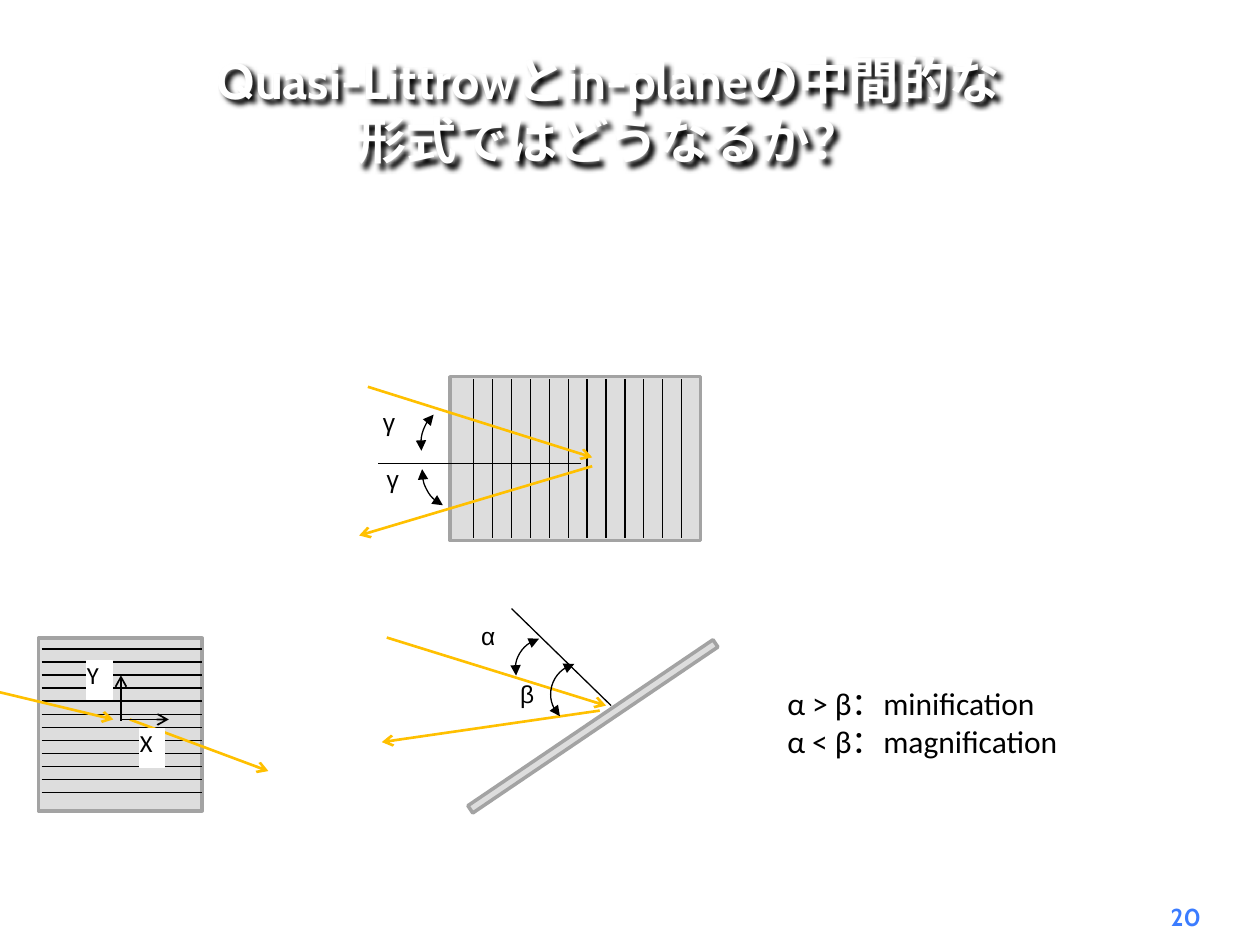
import pptx
import pptx.util
import pptx.dml.color
import pptx.enum.dml
import pptx.enum.shapes
import pptx.enum.text
import lxml.etree
from pptx.oxml.ns import qn

Inches = pptx.util.Inches
SHAPE = pptx.enum.shapes.MSO_SHAPE
ALIGN = pptx.enum.text.PP_ALIGN
ANCHOR = pptx.enum.text.MSO_ANCHOR

THEME = {
    "ink": "000000", "white": "FFFFFF", "ray": "FFC000", "plate": "DDDDDD",
    "edge": "A3A3A3", "page": "3B7CFF",
    "head_font": "Cabin", "body_font": "Calibri", "greek_font": "Arial",
    "title": 28.8, "note": 18, "label": 14,
    "thin": 0.75, "axis": 1, "ray_width": 1.5, "edge_width": 2, "box_width": 0.5,
}

TITLE = "Quasi-Littrowとin-planeの中間的な形式ではどうなるか？"
NOTES = ["α > β：minification", "α < β：magnification"]
PAGE = "20"

SIDE_VIEW = {
    "plate": (3.53, 5.73, 2.35, 0.07, 145.9),
    "rays": [(3.07, 5.06, 4.81, 5.6), (4.76, 5.64, 3.03, 5.89)],
    "normals": [(4.85, 5.6, 4.06, 4.83)],
    "arcs": [(4.09, 5.06, 0.52, 0.5, 101.01, 151.95), (4.37, 5.26, 0.52, 0.5, 82.13, 151.95)],
    "angles": [("α", 3.72, 4.88, 0.73, 0.5), ("β", 4.03, 5.34, 0.73, 0.5)],
}
TOP_VIEW = {
    "plate": (3.57, 2.99, 1.99, 1.3, 0),
    "grooves": [(3.76 + 0.15 * i, 3.01, 3.76 + 0.15 * i, 4.27) for i in range(12)],
    "rays": [(2.92, 3.07, 4.7, 3.63), (4.7, 3.7, 2.85, 4.25)],
    "normals": [(4.61, 3.68, 3, 3.68)],
    "arcs": [(3.34, 3.23, 0.52, 0.59, 101.01, 141.53), (3.35, 3.44, 0.52, 0.59, 65.44, 109.58)],
    "angles": [("γ", 2.94, 3.18, 0.29, 0.5), ("γ", 2.97, 3.63, 0.29, 0.5)],
}
GROOVE_STEP = (6.29 - 5.15) / 11
FRONT_VIEW = {
    "plate": (0.27, 5.1, 1.37, 1.3, 270),
    "grooves": [(0.33, 5.15 + GROOVE_STEP * i, 1.6, 5.15 + GROOVE_STEP * i) for i in range(12)],
    "rays": [(-0.27, 5.43, 0.9, 5.71), (1.03, 5.71, 2.13, 6.12)],
    "axes": [(0.96, 5.71, 1.34, 5.71), (0.96, 5.72, 0.96, 5.36)],
    "axis_names": [("Y", 0.69, 5.24, 0.2, 0.31), ("X", 1.11, 5.78, 0.2, 0.31)],
}


def rgb(name):
    return pptx.dml.color.RGBColor.from_string(THEME[name])


def write(sp, lines, font="body_font", size="label", color="ink", bold=False,
          align=ALIGN.JUSTIFY, anchor=ANCHOR.TOP, inset=None):
    tf = sp.text_frame
    tf.word_wrap = True
    tf.auto_size = pptx.enum.text.MSO_AUTO_SIZE.NONE
    tf.vertical_anchor = anchor
    if inset is not None:
        tf.margin_left = tf.margin_top = tf.margin_right = tf.margin_bottom = Inches(inset)
    for i, line in enumerate(lines):
        p = tf.paragraphs[0] if i == 0 else tf.add_paragraph()
        p.alignment = align
        r = p.add_run()
        r.text = line
        r.font.name = THEME[font]
        r.font.size = pptx.util.Pt(THEME[size])
        r.font.bold = bold
        r.font.color.rgb = rgb(color)


def add_text(shapes, lines, x, y, w, h, **style):
    sp = shapes.add_textbox(Inches(x), Inches(y), Inches(w), Inches(h))
    write(sp, lines, **style)


def stroke(sp, color, width, head=None, tail=None):
    sp.line.color.rgb = rgb(color)
    sp.line.width = pptx.util.Pt(THEME[width])
    ln = sp.line._get_or_add_ln()
    for tag, kind in (("a:headEnd", head), ("a:tailEnd", tail)):
        if kind:
            lxml.etree.SubElement(ln, qn(tag), type=kind)


def add_line(shapes, x1, y1, x2, y2, color="ink", width="thin", tail=None):
    cn = shapes.add_connector(pptx.enum.shapes.MSO_CONNECTOR.STRAIGHT,
                              Inches(x1), Inches(y1), Inches(x2), Inches(y2))
    stroke(cn, color, width, tail=tail)
    lxml.etree.SubElement(cn._element.spPr, qn("a:effectLst"))


def add_box(shapes, x, y, w, h, fill, line, width, rotation=0):
    sp = shapes.add_shape(SHAPE.RECTANGLE, Inches(x), Inches(y), Inches(w), Inches(h))
    sp.rotation = rotation
    sp.shadow.inherit = False
    sp.fill.solid()
    sp.fill.fore_color.rgb = rgb(fill)
    stroke(sp, line, width)
    return sp


def add_arc(shapes, x, y, w, h, start, end):
    sp = shapes.add_shape(SHAPE.ARC, Inches(x), Inches(y), Inches(w), Inches(h))
    sp.adjustments[0], sp.adjustments[1] = start, end
    sp.shadow.inherit = False
    sp.fill.background()
    stroke(sp, "ink", "thin", head="triangle", tail="triangle")


def add_view(slide, view):
    shapes = slide.shapes.add_group_shape().shapes
    x, y, w, h, rotation = view["plate"]
    add_box(shapes, x, y, w, h, "plate", "edge", "edge_width", rotation)
    for groove in view.get("grooves", []):
        add_line(shapes, *groove)
    for ray in view["rays"]:
        add_line(shapes, *ray, color="ray", width="ray_width", tail="arrow")
    for normal in view.get("normals", []):
        add_line(shapes, *normal)
    for axis in view.get("axes", []):
        add_line(shapes, *axis, width="axis", tail="arrow")
    for arc in view.get("arcs", []):
        add_arc(shapes, *arc)
    for name, *place in view.get("angles", []):
        add_text(shapes, [name], *place, font="greek_font")
    for name, *place in view.get("axis_names", []):
        sp = add_box(shapes, *place, "white", "white", "box_width")
        write(sp, [name], inset=0)


def add_title(slide):
    sp = slide.shapes.title
    sp.left, sp.top, sp.width, sp.height = (Inches(v) for v in (1.48, 0.33, 6.7, 1.08))
    write(sp, [TITLE], font="head_font", size="title", color="white", bold=True,
          align=ALIGN.CENTER, anchor=ANCHOR.MIDDLE)
    effects = lxml.etree.SubElement(sp._element.spPr, qn("a:effectLst"))
    shadow = lxml.etree.SubElement(effects, qn("a:outerShdw"), blurRad="38100",
                                   dist="38100", dir="2700000", algn="tl")
    lxml.etree.SubElement(shadow, qn("a:srgbClr"), val=THEME["ink"])


def main():
    prs = pptx.Presentation()
    prs.slide_width, prs.slide_height = Inches(10), Inches(7.5)
    slide = prs.slides.add_slide(prs.slide_layouts[5])
    add_title(slide)
    for view in (SIDE_VIEW, TOP_VIEW, FRONT_VIEW):
        add_view(slide, view)
    add_text(slide.shapes, NOTES, 6.15, 5.38, 3.36, 0.71, size="note", align=ALIGN.LEFT)
    add_text(slide.shapes, [PAGE], 8.42, 7.11, 1.21, 0.34, font="head_font",
             color="page", bold=True, align=ALIGN.RIGHT)
    prs.save("out.pptx")


if __name__ == "__main__":
    main()
